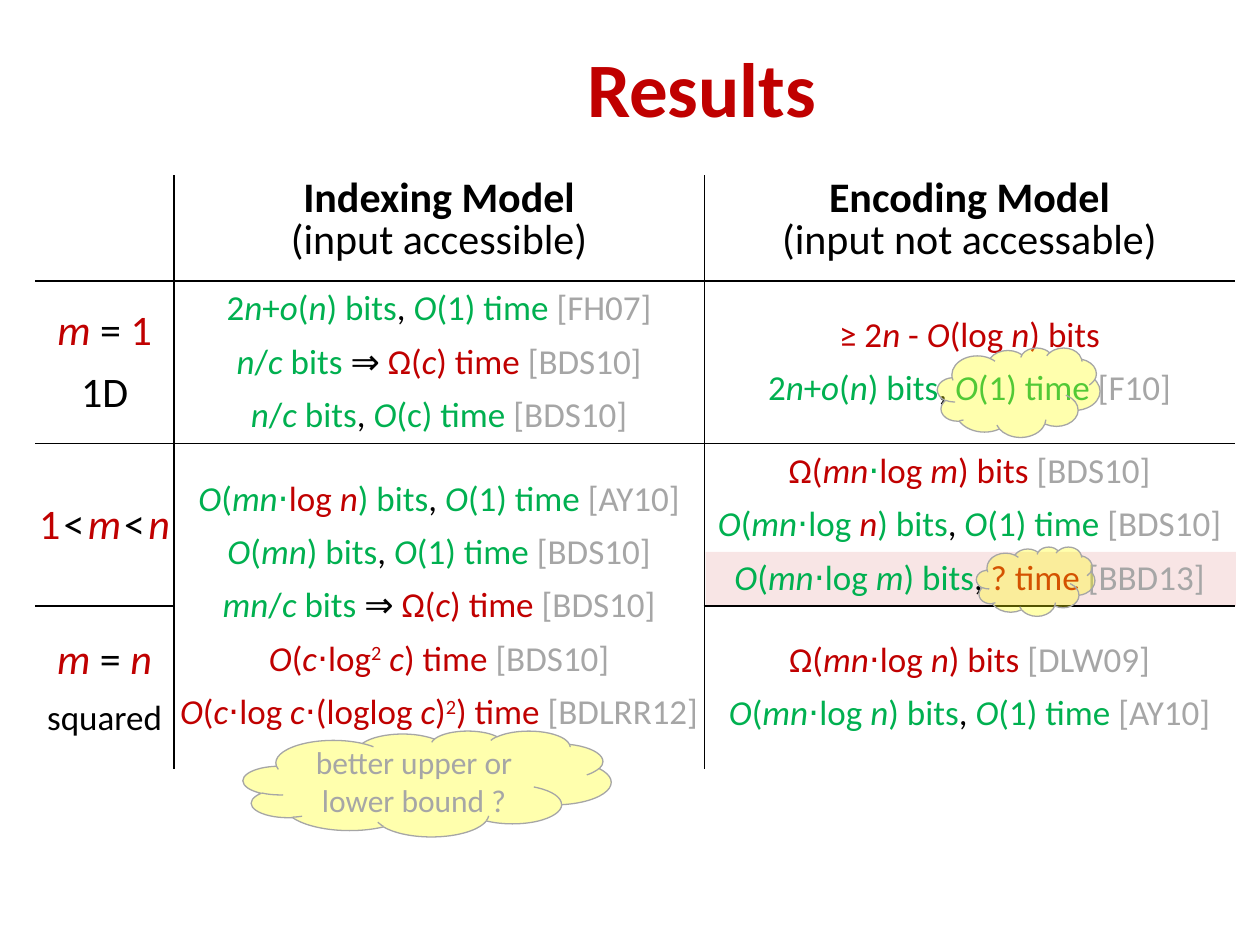
from pptx import Presentation
from pptx.dml.color import RGBColor
from pptx.enum.shapes import MSO_SHAPE
from pptx.enum.text import MSO_ANCHOR, PP_ALIGN
from pptx.oxml.ns import qn
from pptx.util import Inches, Pt
from lxml.etree import SubElement

COLORS = {"black": "000000", "red": "C00000", "green": "00B050",
          "gray": "A6A6A6", "yellow": "FFFF00"}
FONT = "Calibri"

# Markup: "|" starts a span whose first letter is its colour;
# _ toggles italic, * bold, ^ superscript, ~ tiny size
CODES = {"k": "black", "r": "red", "g": "green", "a": "gray"}
FAST = "|k, |g_O_(1) time "
SLOW = "_n_/_c _bits |k⇒ |rΩ(_c_) time |a[BDS10]"

HEADERS = ["", "k*Indexing Model*\nk(input accessible)",
           "k*Encoding Model*\nk(input not accessable)"]
LABELS = ["r_m_|k = |r1\nk1D",
          "r1~ ~|k<|r~ ~_m~ ~_|k<~ ~|r_n_",
          "r_m_|k = |r_n_"]
INDEXING = [
    ["g2_n_+_o_(_n_) bits" + FAST + "|a[FH07]",
     "g" + SLOW,
     "g_n_/_c_ bits|k, |g_O_(c) time |a[BDS10]"],
    ["g_O_(_mn⋅_|rlog _n_|g) bits" + FAST + "|a[AY10]",
     "g_O_(_mn_) bits" + FAST + "|a[BDS10]",
     "g" + SLOW.replace("_n_", "_mn_", 1),
     "r_O_(_c⋅_log^2^_ c_) time |a[BDS10]",
     "r_O_(_c_⋅log_ c⋅_(loglog_ c_)^2^) time |a[BDLRR12]"],
]
ENCODING = [
    ["r≥ 2_n _- _O_(log _n_) bits",
     "g2_n_+_o_(_n_) bits" + FAST + "|a[F10]"],
    ["rΩ(_mn_|g⋅|rlog _m_) bits |a[BDS10]",
     "g_O_(_mn_⋅log |r_n_|g) bits" + FAST + "|a[BDS10]",
     "g_O_(_mn_⋅log _m_) bits|k,|r ? time |a[BBD13]"],
    ["rΩ(_mn_⋅log _n_) bits |a[DLW09]",
     "g_O_(_mn_⋅log _n_) bits" + FAST + "|a[AY10]"],
]
CLOUDS = [
    (1.93, 5.8, 2.92, 0.84, "abetter upper or lower bound ?"),
    (7.75, 4.34, 0.94, 0.55, ""),
    (7.44, 2.76, 1.29, 0.71, ""),
]

LEFT, TOP = 0.28, 1.39
COLUMNS = [1.1, 4.21, 4.21]
ROWS = [0.84, 1.29, 1.29, 1.29]
MERGED_COLUMN, MERGED_ROW = 1, 2


def rgb(name):
    return RGBColor.from_string(COLORS[name])


def write_line(para, text, size=20, after=0, spacing=None, bold=False):
    """Fill a centred paragraph from marked-up text."""
    para.alignment = PP_ALIGN.CENTER
    para.space_after = Pt(after)
    if spacing:
        para.line_spacing = Pt(spacing)
    active = set()

    def add_span(words, color):
        span = para.add_run()
        span.text = words
        font = span.font
        font.name = FONT
        font.size = Pt(8 if "~" in active else size)
        font.color.rgb = rgb(color)
        font.bold = bold or "*" in active
        font.italic = "_" in active
        if "^" in active:
            font._element.set("baseline", "30000")

    for part in filter(None, text.split("|")):
        words = ""
        for letter in part[1:]:
            if letter in "_*^~":
                if words:
                    add_span(words, CODES[part[0]])
                words = ""
                active ^= {letter}
            else:
                words += letter
        if words:
            add_span(words, CODES[part[0]])


def write_lines(frame, lines, **form):
    for index, line in enumerate(lines):
        para = frame.add_paragraph() if index else frame.paragraphs[0]
        write_line(para, line, **form)


def fill_alpha(shape, color, percent):
    shape.fill.solid()
    shape.fill.fore_color.rgb = rgb(color)
    node = shape._element.spPr.find(qn("a:solidFill"))[0]
    SubElement(node, qn("a:alpha")).set("val", str(percent * 1000))


def set_borders(cell, sides):
    """Draw the named sides in black and clear the others."""
    properties = cell._tc.get_or_add_tcPr()
    for index, side in enumerate("LRTB"):
        line = SubElement(properties, qn("a:ln" + side))
        properties.insert(index, line)
        line.set("w", str(Pt(1)))
        if side in sides:
            fill = SubElement(line, qn("a:solidFill"))
            SubElement(fill, qn("a:srgbClr")).set("val", COLORS["black"])
        else:
            SubElement(line, qn("a:noFill"))


def inner_sides(row, column):
    sides = ""
    if column > 0:
        sides += "L"
    if column < len(COLUMNS) - 1:
        sides += "R"
    merged = column == MERGED_COLUMN
    if row > 0 and not (merged and row == MERGED_ROW + 1):
        sides += "T"
    if row < len(ROWS) - 1 and not (merged and row == MERGED_ROW):
        sides += "B"
    return sides


def add_results(page):
    table = page.shapes.add_table(
        len(ROWS), len(COLUMNS), Inches(LEFT), Inches(TOP),
        Inches(sum(COLUMNS)), Inches(sum(ROWS))).table
    table.first_row = table.horz_banding = False
    for column, width in zip(table.columns, COLUMNS):
        column.width = Inches(width)
    for row, height in zip(table.rows, ROWS):
        row.height = Inches(height)
    for row in range(len(ROWS)):
        for column in range(len(COLUMNS)):
            cell = table.cell(row, column)
            cell.fill.background()
            set_borders(cell, inner_sides(row, column))
            if row:
                cell.vertical_anchor = MSO_ANCHOR.MIDDLE
                cell.margin_left = cell.margin_right = 0
                cell.margin_top = cell.margin_bottom = 0
    table.cell(MERGED_ROW, MERGED_COLUMN).merge(
        table.cell(MERGED_ROW + 1, MERGED_COLUMN))

    for column, header in enumerate(HEADERS):
        write_lines(table.cell(0, column).text_frame, header.split("\n"),
                    size=24, spacing=24)
    for row, label in enumerate(LABELS, 1):
        write_lines(table.cell(row, 0).text_frame, label.split("\n"),
                    size=24, after=6)
    for column, results in enumerate([INDEXING, ENCODING], 1):
        for row, lines in enumerate(results, 1):
            write_lines(table.cell(row, column).text_frame, lines, after=6)
    # The last label has a smaller second line
    write_line(table.cell(3, 0).text_frame.add_paragraph(), "ksquared", after=6)


def main():
    deck = Presentation()
    deck.slide_width, deck.slide_height = Inches(10), Inches(7.5)
    page = deck.slides.add_slide(deck.slide_layouts[5])

    # Title
    title = page.shapes.title
    title.left, title.top = Inches(1.97), Inches(0.06)
    title.width, title.height = Inches(7.2), Inches(1.25)
    title.text_frame.vertical_anchor = MSO_ANCHOR.MIDDLE
    write_line(title.text_frame.paragraphs[0], "rResults", size=44, bold=True)

    # Highlight behind the newest result
    band = page.shapes.add_shape(MSO_SHAPE.RECTANGLE, Inches(5.6), Inches(4.38),
                                 Inches(COLUMNS[2]), Inches(0.43))
    band.shadow.inherit = False
    band.line.fill.background()
    fill_alpha(band, "red", 10)

    add_results(page)

    # Clouds around open questions
    for left, top, width, height, text in CLOUDS:
        cloud = page.shapes.add_shape(MSO_SHAPE.CLOUD, Inches(left), Inches(top),
                                      Inches(width), Inches(height))
        cloud.shadow.inherit = False
        fill_alpha(cloud, "yellow", 32)
        cloud.line.color.rgb = rgb("gray")
        cloud.line.width = Pt(0.75)
        if text:
            cloud.text_frame.word_wrap = True
            cloud.text_frame.vertical_anchor = MSO_ANCHOR.MIDDLE
            write_line(cloud.text_frame.paragraphs[0], text, size=18)

    deck.save("out.pptx")


if __name__ == "__main__":
    main()
